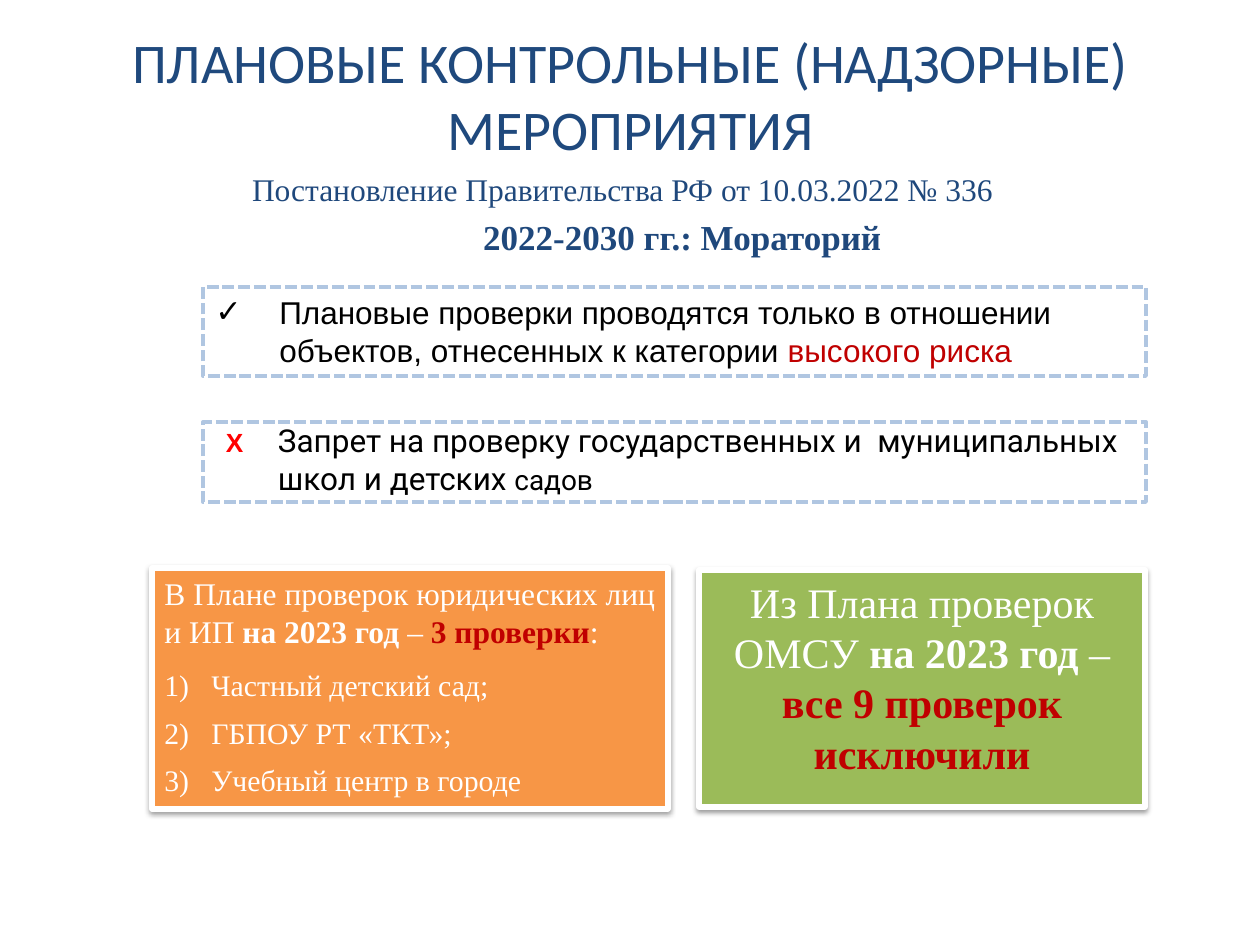
from lxml import etree
from pptx import Presentation
from pptx.dml.color import RGBColor
from pptx.enum.dml import MSO_LINE
from pptx.enum.shapes import MSO_SHAPE
from pptx.enum.text import MSO_ANCHOR, PP_ALIGN
from pptx.oxml.ns import qn
from pptx.util import Emu, Pt

PX = 914400 / 126
RECT = MSO_SHAPE.RECTANGLE
DASH = MSO_LINE.SQUARE_DOT
TOP, MIDDLE = MSO_ANCHOR.TOP, MSO_ANCHOR.MIDDLE
LEFT, CENTER, JUSTIFY = PP_ALIGN.LEFT, PP_ALIGN.CENTER, PP_ALIGN.JUSTIFY
SERIF = "Times New Roman"
COLORS = {
    "title": "1F497D", "navy": "1F487C", "dash": "B0C6E1", "orange": "F79646",
    "green": "9BBB59", "white": "FFFFFF", "black": "000000",
    "dark_red": "C00000", "red": "FF0000",
}


def px(*values):
    return [Emu(round(v * PX)) for v in values]


def write(p, font, size, runs, align=LEFT, hang=0, bullet=None):
    """Fill p with (text, colour, bold) runs; hang is in px, bullet is (tag, attributes)."""
    p.alignment = align
    p.space_before = Pt(0.8)
    for text, color, bold in runs:
        r = p.add_run()
        r.text = text
        r.font.name, r.font.size, r.font.bold = font, Pt(size), bold
        r.font.color.rgb = RGBColor.from_string(COLORS[color])
    pPr = p._p.get_or_add_pPr()
    if hang:
        indent = px(hang)[0]
        pPr.set("marL", str(indent))
        pPr.set("indent", str(-indent))
    if bullet:
        tag, attributes = bullet
        etree.SubElement(pPr, qn("a:buFont"), typeface=font)
        etree.SubElement(pPr, qn(tag), attributes)


prs = Presentation()
prs.slide_width, prs.slide_height = px(1260, 945)
s = prs.slides.add_slide(prs.slide_layouts[6])

# Dashed frames
frames = []
for top, height in [(287, 89), (422, 80)]:
    sp = s.shapes.add_shape(RECT, *px(203, top, 943, height))
    sp.shadow.inherit = False
    sp.fill.background()
    sp.line.color.rgb = RGBColor.from_string(COLORS["dash"])
    sp.line.width = Pt(2.25)
    sp.line.dash_style = DASH
    frames.append(sp)

# Filled cards with a soft shadow
cards = []
for box, color in [((152, 568, 516, 241), "orange"), ((699, 570, 446, 237), "green")]:
    sp = s.shapes.add_shape(RECT, *px(*box))
    sp.shadow.inherit = False
    sp.fill.solid()
    sp.fill.fore_color.rgb = RGBColor.from_string(COLORS[color])
    sp.line.color.rgb = RGBColor.from_string(COLORS["white"])
    sp.line.width = Pt(3)
    effects = sp._element.spPr.find(qn("a:effectLst"))
    shadow = etree.SubElement(effects, qn("a:outerShdw"), blurRad=str(Pt(3.1)),
                              dist=str(Pt(1.6)), dir="5400000", rotWithShape="0")
    shade = etree.SubElement(shadow, qn("a:srgbClr"), val=COLORS["black"])
    etree.SubElement(shade, qn("a:alpha"), val="38000")
    cards.append(sp)

for sp in frames + cards:
    sp.text_frame.word_wrap = True
    sp.text_frame.vertical_anchor = TOP

write(frames[0].text_frame.paragraphs[0], "Arial", 18, [
    ("Плановые проверки проводятся только в отношении объектов, отнесенных к категории ",
     "black", False),
    ("высокого риска", "dark_red", False),
], hang=64, bullet=("a:buChar", {"char": "✓"}))

tf = cards[0].text_frame
p = tf.paragraphs[0]
write(p, SERIF, 18, [
    ("В Плане проверок юридических лиц и ИП ", "white", False),
    ("на 2023 год ", "white", True),
    ("– ", "white", False),
    ("3 проверки", "dark_red", True),
    (":", "white", False),
], JUSTIFY)
p.space_after = Pt(9)
for item in ["Частный детский сад;", "ГБПОУ РТ «ТКТ»;", "Учебный центр в городе"]:
    p = tf.add_paragraph()
    write(p, SERIF, 17, [(item, "white", False)], JUSTIFY, hang=47,
          bullet=("a:buAutoNum", {"type": "arabicParenR"}))
    p.space_after = Pt(6)

write(cards[1].text_frame.paragraphs[0], SERIF, 24, [
    ("Из Плана проверок ОМСУ ", "white", False),
    ("на 2023 год ", "white", True),
    ("– ", "white", False),
    ("все 9 проверок исключили", "dark_red", True),
], CENTER)

# Headings and the text of the second frame
texts = [
    ((30, 26, 1201, 137), "Calibri", 32, CENTER, 0,
     [("ПЛАНОВЫЕ КОНТРОЛЬНЫЕ (НАДЗОРНЫЕ) МЕРОПРИЯТИЯ", "title", False)]),
    ((252, 169, 837, 39), SERIF, 18, LEFT, 0,
     [("Постановление Правительства РФ от 10.03.2022 № 336", "navy", False)]),
    ((483, 213, 420, 47), SERIF, 20, LEFT, 0,
     [("2022-2030 гг.: Мораторий", "navy", True)]),
    ((226, 420, 897, 78), "Roboto", 18, LEFT, 52,
     [("X\t", "red", True),
      ("Запрет на проверку государственных и  муниципальных школ и детских ", "black", False),
      ("садов", "black", False)]),
]
for box, font, size, align, hang, runs in texts:
    tf = s.shapes.add_textbox(*px(*box)).text_frame
    tf.word_wrap = True
    tf.vertical_anchor = MIDDLE
    tf.margin_left = tf.margin_right = tf.margin_top = tf.margin_bottom = 0
    write(tf.paragraphs[0], font, size, runs, align, hang)

cross, _, last_word = tf.paragraphs[0].runs
cross.font.name, cross.font.size = "Arial", Pt(15)
last_word.font.size = Pt(16)

prs.save("out.pptx")
